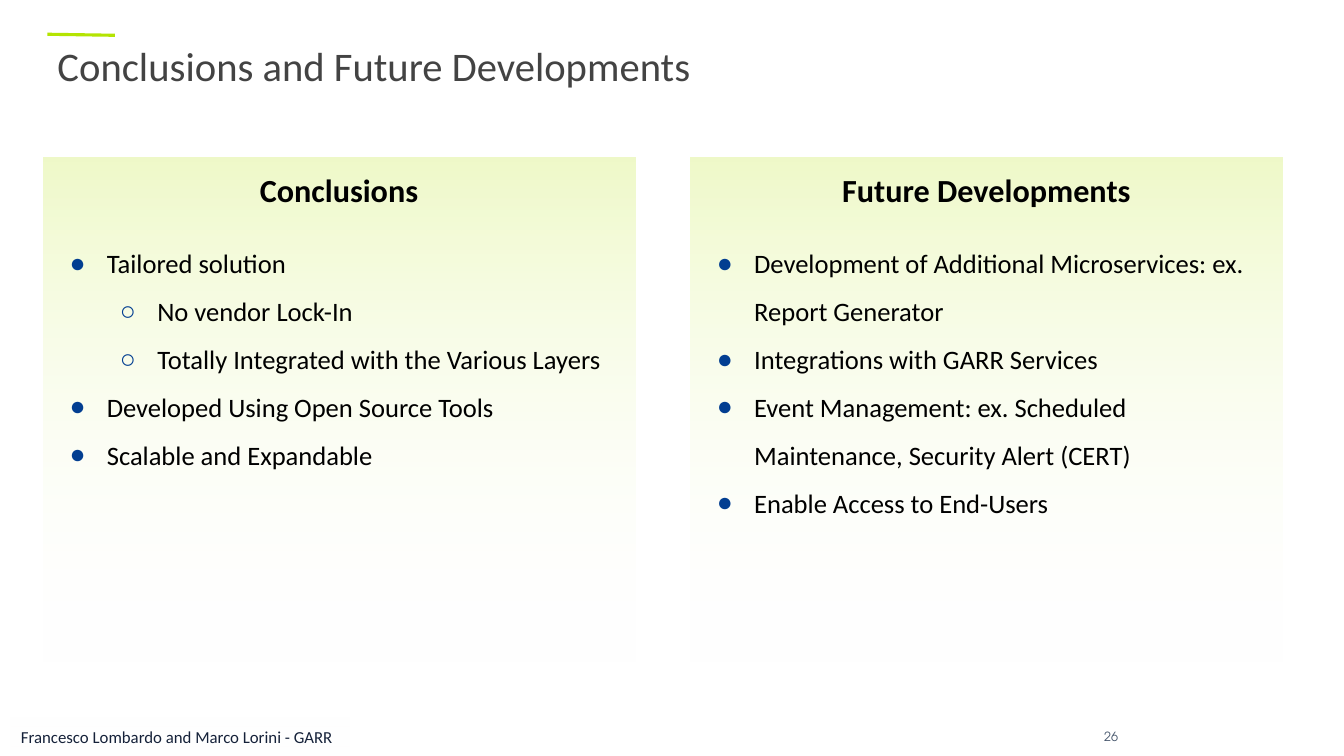
"""Build the slide on conclusions and future developments."""
from lxml import etree
from pptx import Presentation
from pptx.dml.color import RGBColor
from pptx.enum.shapes import MSO_CONNECTOR, MSO_SHAPE
from pptx.enum.text import MSO_ANCHOR, MSO_AUTO_SIZE, PP_ALIGN
from pptx.oxml.ns import qn
from pptx.util import Inches, Pt

LEFT, CENTER = PP_ALIGN.LEFT, PP_ALIGN.CENTER
TOP, MIDDLE = MSO_ANCHOR.TOP, MSO_ANCHOR.MIDDLE
STRAIGHT, RECTANGLE = MSO_CONNECTOR.STRAIGHT, MSO_SHAPE.RECTANGLE
NO_AUTOFIT = MSO_AUTO_SIZE.NONE

TITLE = "Conclusions and Future Developments"
PANELS = [
    ("Conclusions", [
        (0, "Tailored solution"),
        (1, "No vendor Lock-In"),
        (1, "Totally Integrated with the Various Layers"),
        (0, "Developed Using Open Source Tools"),
        (0, "Scalable and Expandable"),
    ]),
    ("Future Developments", [
        (0, "Development of Additional Microservices: ex. Report Generator"),
        (0, "Integrations with GARR Services"),
        (0, "Event Management: ex. Scheduled Maintenance, Security Alert (CERT)"),
        (0, "Enable Access to End-Users"),
    ]),
]
AUTHORS = "Francesco Lombardo and Marco Lorini - GARR"
PAGE = "26"

FONT, PAGE_FONT = "Calibri", "TeX Gyre Adventor"
LIME, WHITE, BLACK, BULLET_BLUE = "B4E402", "FFFFFF", "000000", "023E91"
PANEL_FADE = [(0, LIME, 22), (100, WHITE, 0)]
FOOTER_FADE = [(0, "FFFEFE", 10), (50, WHITE, 100), (100, "FFFEFE", 10)]
BULLETS = "●○"
PANEL_LEFT, PANEL_TOP, PANEL_WIDTH, PANEL_HEIGHT = 0.43, 1.56, 5.87, 5.12
PANEL_PITCH = 6.42
FOOTER_TOP, FOOTER_HEIGHT = 7.12, 0.38


def color(value):
    return RGBColor.from_string(value)


def place(shape, left, top, width, height):
    shape.left, shape.top = Inches(left), Inches(top)
    shape.width, shape.height = Inches(width), Inches(height)


def fade(shape, stops):
    shape.fill.gradient()
    shape.fill.gradient_angle = 270
    stop_list = shape.fill._fill._gradFill.find(qn("a:gsLst"))
    for old_stop in list(stop_list):
        stop_list.remove(old_stop)
    for position, value, opacity in stops:
        stop = etree.SubElement(stop_list, qn("a:gs"), pos=str(position * 1000))
        tint = etree.SubElement(stop, qn("a:srgbClr"), val=value)
        etree.SubElement(tint, qn("a:alpha"), val=str(opacity * 1000))


def set_frame(frame, anchor, horizontal, vertical):
    frame.word_wrap = True
    frame.auto_size = NO_AUTOFIT
    frame.vertical_anchor = anchor
    frame.margin_left = frame.margin_right = Inches(horizontal)
    frame.margin_top = frame.margin_bottom = Inches(vertical)


def write(paragraph, text, size, value, align=LEFT, font=FONT, bold=False, spacing=1.0):
    paragraph.alignment = align
    paragraph.line_spacing = spacing
    run = paragraph.add_run()
    run.text = text
    run.font.name, run.font.size, run.font.bold = font, Pt(size), bold
    run.font.color.rgb = color(value)


def indent(paragraph, left, hanging):
    properties = paragraph._p.get_or_add_pPr()
    properties.set("marL", str(Inches(left)))
    properties.set("indent", str(-Inches(hanging)))
    return properties


def add_bullet(paragraph, level):
    paragraph.level = level
    properties = indent(paragraph, 0.5 * (level + 1), 0.37)
    bullet_color = etree.SubElement(properties, qn("a:buClr"))
    etree.SubElement(bullet_color, qn("a:srgbClr"), val=BULLET_BLUE)
    etree.SubElement(properties, qn("a:buChar"), char=BULLETS[level])


def fill_panel(panel, heading, points):
    fade(panel, PANEL_FADE)
    frame = panel.text_frame
    set_frame(frame, TOP, 0.13, 0.13)
    first = frame.paragraphs[0]
    etree.SubElement(indent(first, 0, 0), qn("a:buNone"))
    first.space_before = Pt(0)
    write(first, heading, 23, BLACK, CENTER, bold=True)
    for number, (level, text) in enumerate(points):
        paragraph = frame.add_paragraph()
        add_bullet(paragraph, level)
        paragraph.space_before = Pt(0 if number else 16)
        write(paragraph, text, 19, BLACK, spacing=1.5)


def main():
    deck = Presentation()
    deck.slide_width, deck.slide_height = Inches(13.33), Inches(7.5)
    slide = deck.slides.add_slide(deck.slide_layouts[3])
    title, *panels = slide.placeholders

    place(title, 0.47, 0.35, 8.75, 0.65)
    set_frame(title.text_frame, MIDDLE, 0.1, 0.05)
    write(title.text_frame.paragraphs[0], TITLE, 29, "434343", spacing=0.9)

    for column, (panel, (heading, points)) in enumerate(zip(panels, PANELS)):
        place(panel, PANEL_LEFT + column * PANEL_PITCH, PANEL_TOP, PANEL_WIDTH, PANEL_HEIGHT)
        fill_panel(panel, heading, points)

    accent = slide.shapes.add_connector(
        STRAIGHT, Inches(1.14), Inches(0.35), Inches(0.47), Inches(0.34))
    accent.line.color.rgb, accent.line.width = color(LIME), Pt(2.25)
    etree.SubElement(accent._element.spPr, qn("a:effectLst"))

    authors = slide.shapes.add_shape(RECTANGLE, 0, 0, 0, 0)
    place(authors, 0.11, FOOTER_TOP, 3.36, FOOTER_HEIGHT)
    authors.shadow.inherit = False
    authors.line.fill.background()
    fade(authors, FOOTER_FADE)
    set_frame(authors.text_frame, MIDDLE, 0.1, 0.05)
    write(authors.text_frame.paragraphs[0], AUTHORS, 12, "152139")

    page = slide.shapes.add_textbox(0, 0, 0, 0)
    place(page, 10.79, FOOTER_TOP, 0.46, FOOTER_HEIGHT)
    set_frame(page.text_frame, MIDDLE, 0.1, 0.05)
    write(page.text_frame.paragraphs[0], PAGE, 9, "44546A", CENTER, PAGE_FONT)

    deck.save("out.pptx")


if __name__ == "__main__":
    main()
